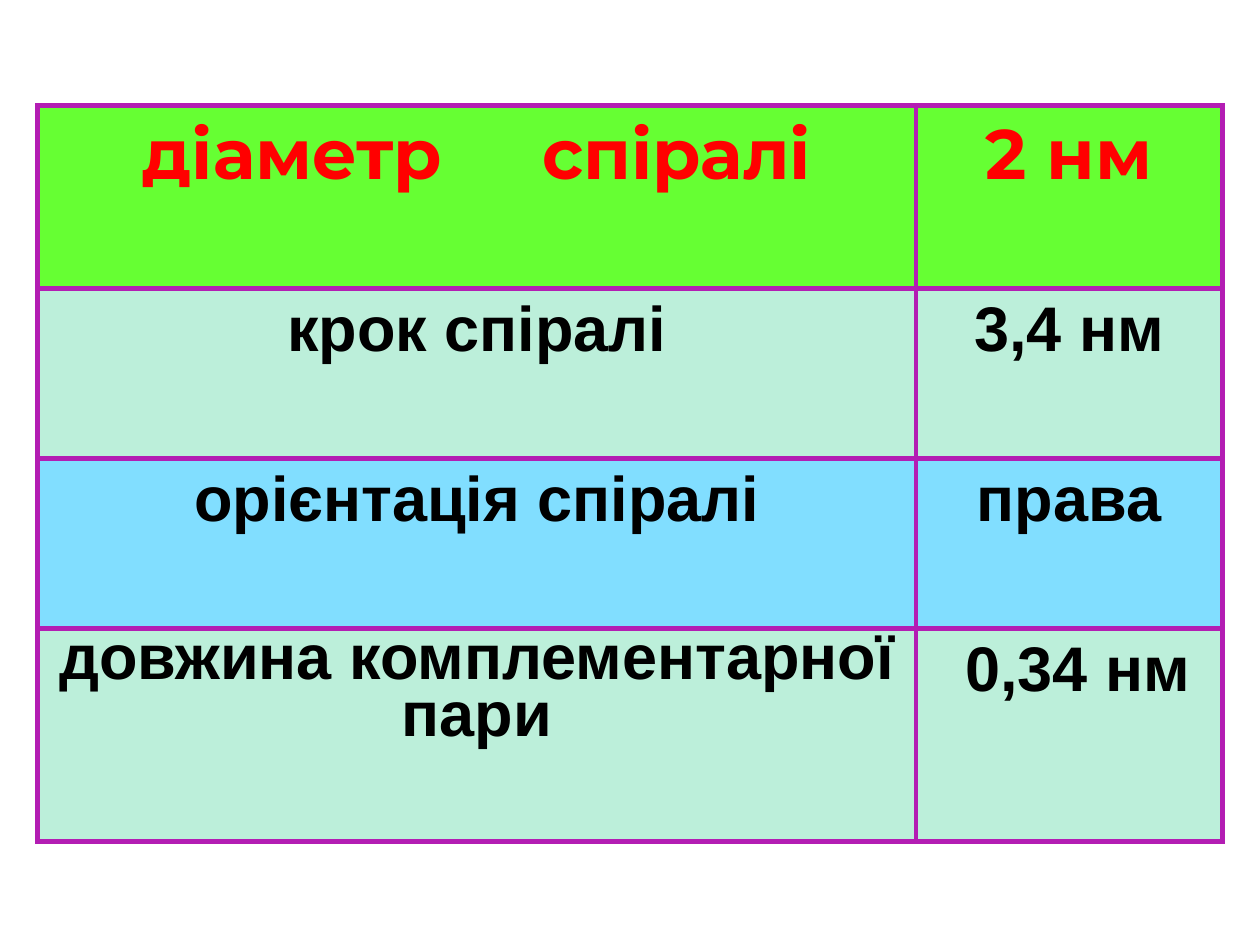
from lxml import etree
from pptx import Presentation
from pptx.dml.color import RGBColor
from pptx.enum.text import PP_ALIGN as Align
from pptx.oxml.ns import qn
from pptx.util import Cm, Pt

COLORS = {
    "border": "B31DB3",
    "green": "66FF33",
    "mint": "BCEFDA",
    "blue": "81DEFF",
    "red": "FF0000",
    "black": "000000",
}
HEADING = {"font": "Montserrat", "size": 40, "color": "red"}
COLUMN_SHARES = (6.97, 2.43)
# Property, value, row height in cm, fill, text format
ROWS = [
    ("діаметр спіралі", "2 нм", 3.68, "green", HEADING),
    ("крок спіралі", "3,4 нм", 3.43, "mint", {}),
    ("орієнтація спіралі", "права", 3.43, "blue", {}),
    ("довжина комплементарної пари", "0,34 нм", 4.29, "mint", {}),
]


def write_text(text_frame, text, font="Arial", size=36, color="black",
               line_spacing=None, word_gap=0):
    """Write one centred bold paragraph; word_gap widens its spaces, in points."""
    paragraph = text_frame.paragraphs[0]
    paragraph.alignment = Align.CENTER
    if line_spacing:
        paragraph.line_spacing = line_spacing
    head, space, tail = text.partition(" ") if word_gap else (text, "", "")
    for part in filter(None, (head, space, tail)):
        run = paragraph.add_run()
        run.text = part
        run.font.name = font
        run.font.size = Pt(size)
        run.font.bold = True
        run.font.color.rgb = RGBColor.from_string(COLORS[color])
        if part == " ":
            run.font._element.set("spc", str(round(word_gap * 100)))


def style_cell(cell, fill, border_width=3):
    properties = cell._tc.get_or_add_tcPr()
    for side in ("a:lnL", "a:lnR", "a:lnT", "a:lnB"):
        line = etree.SubElement(properties, qn(side), w=str(Pt(border_width)))
        solid = etree.SubElement(line, qn("a:solidFill"))
        etree.SubElement(solid, qn("a:srgbClr"), val=COLORS["border"])
    cell.fill.solid()
    cell.fill.fore_color.rgb = RGBColor.from_string(COLORS[fill])


def add_helix_table(slide, left, top, width):
    height = Cm(sum(row[2] for row in ROWS))
    table = slide.shapes.add_table(len(ROWS), 2, left, top, width, height).table
    for column, share in zip(table.columns, COLUMN_SHARES):
        column.width = int(width * share / sum(COLUMN_SHARES))
    for index, (label, value, row_height, fill, text_format) in enumerate(ROWS):
        table.rows[index].height = Cm(row_height)
        label_cell, value_cell = table.cell(index, 0), table.cell(index, 1)
        for cell in (label_cell, value_cell):
            style_cell(cell, fill)
        first, last = index == 0, index == len(ROWS) - 1
        write_text(label_cell.text_frame, label, word_gap=46 if first else 0,
                   line_spacing=0.8 if last else None, **text_format)
        write_text(value_cell.text_frame, value, **text_format)
        if last:
            value_cell.margin_left = Cm(0.6)


def main():
    presentation = Presentation()
    presentation.slide_width, presentation.slide_height = Cm(25.4), Cm(19.05)
    slide = presentation.slides.add_slide(presentation.slide_layouts[6])
    add_helix_table(slide, Cm(0.76), Cm(2.13), Cm(23.88))
    presentation.save("out.pptx")


if __name__ == "__main__":
    main()
